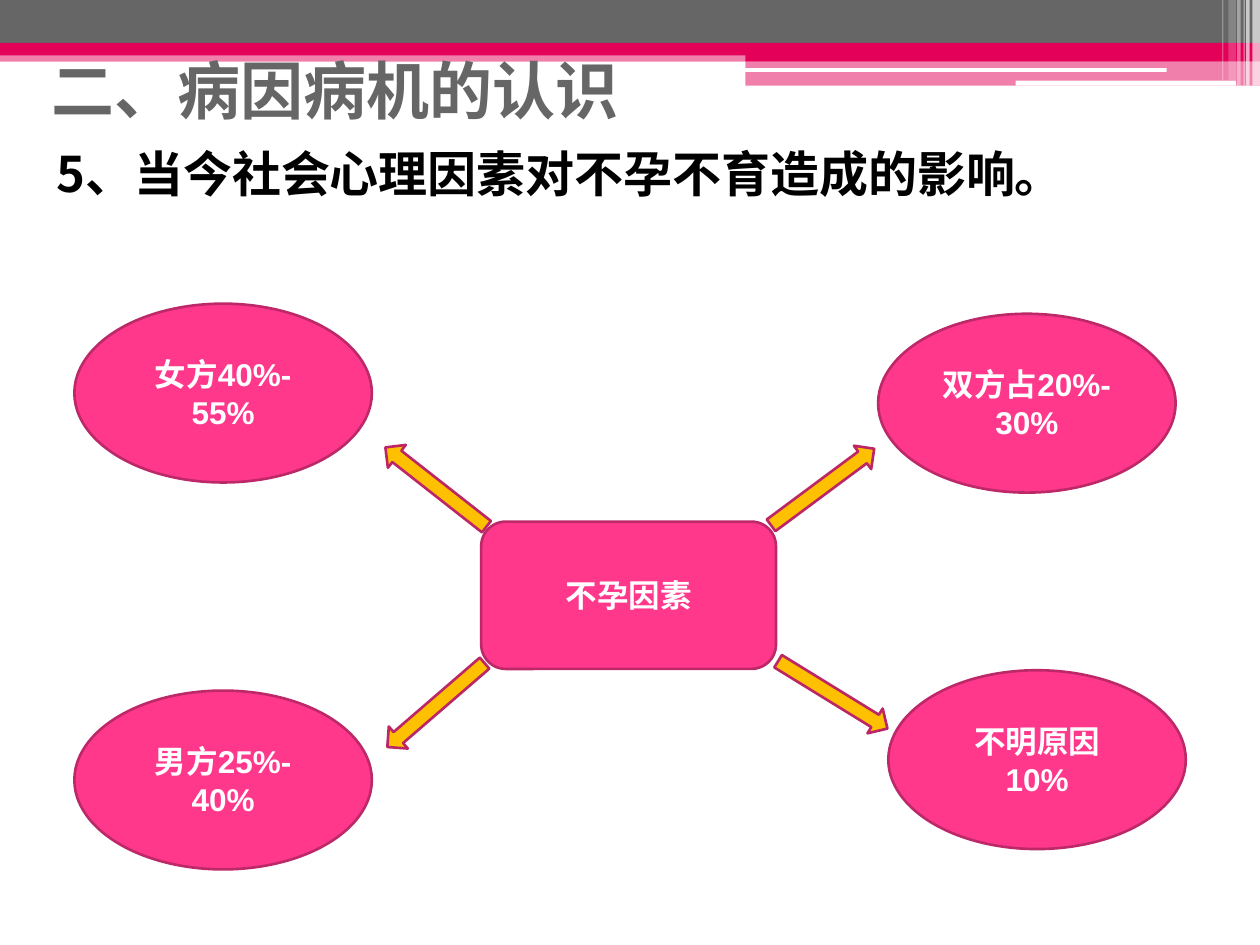
from dataclasses import dataclass

from lxml import etree
from pptx import Presentation
from pptx.dml.color import RGBColor
from pptx.enum.shapes import MSO_SHAPE
from pptx.enum.text import MSO_ANCHOR, MSO_AUTO_SIZE, PP_ALIGN
from pptx.oxml.ns import qn
from pptx.util import Pt

RECT = MSO_SHAPE.RECTANGLE
ROUNDED = MSO_SHAPE.ROUNDED_RECTANGLE
OVAL = MSO_SHAPE.OVAL
ARROW = MSO_SHAPE.RIGHT_ARROW
MIDDLE, TOP = MSO_ANCHOR.MIDDLE, MSO_ANCHOR.TOP
LEFT, CENTER = PP_ALIGN.LEFT, PP_ALIGN.CENTER
FIXED_SIZE = MSO_AUTO_SIZE.NONE
TITLE_ONLY = 5


@dataclass(frozen=True)
class Theme:
    """Colours, fonts and type sizes of the slide."""

    gray: str = "666666"
    crimson: str = "E40059"
    white: str = "FFFFFF"
    black: str = "000000"
    pink: str = "FF388C"
    pink_edge: str = "BD2968"
    gold: str = "FFC000"
    gold_edge: str = "BC2665"
    heading_font: str = "Roboto"
    body_font: str = "Cambria"
    factor_font: str = "Arial"
    chinese_font: str = "Noto Sans CJK SC"
    title_size: int = 36
    body_size: int = 28
    factor_size: int = 18


THEME = Theme()

HEADER_BARS = [
    (RECT, (0, 28.8, 720, 6.5), THEME.crimson, 50),
    (RECT, (0, 0, 720, 24.5), THEME.gray, 100),
    (RECT, (0, 24.5, 720, 7.2), THEME.crimson, 100),
    (RECT, (426, 28, 294, 7), THEME.crimson, 100),
    (RECT, (426, 34.6, 294, 14.4), THEME.crimson, 50),
    (ROUNDED, (425.5, 38.9, 241.2, 2.2), THEME.white, 100),
    (ROUNDED, (580.3, 46.1, 126, 2.9), THEME.white, 100),
]

EDGE_STRIPES = [
    (715.7, 4.3, 49, 65),
    (712.1, 2, 49, 65),
    (710.6, 0.7, 49, 60),
    (707, 2, 49, 40),
    (702, 4.3, 46, 20),
    (698.4, 0.7, 46, 30),
]

FACTORS = [
    ("女方40%-55%", (42.5, 173.5), (212.4, 270), 218.1),
    ("不明原因10%", (507.6, 383), (439.2, 388.8), 31.6),
    ("男方25%-40%", (42.5, 394.6), (212.4, 394.6), 139.2),
    ("双方占20%-30%", (501.8, 179.3), (433.4, 270), 323.4),
]


def add_block(slide, kind, box, fill, alpha=100, edge=None):
    """Add a flat preset shape with optional transparency and outline."""
    block = slide.shapes.add_shape(kind, *map(Pt, box))
    block.shadow.inherit = False
    block.fill.solid()
    block.fill.fore_color.rgb = RGBColor.from_string(fill)
    if alpha < 100:
        color = block.element.spPr.find(".//" + qn("a:srgbClr"))
        etree.SubElement(color, qn("a:alpha"), val=str(alpha * 1000))
    if edge:
        block.line.color.rgb = RGBColor.from_string(edge)
        block.line.width = Pt(1.5)
    else:
        block.line.fill.background()
    return block


def write_text(holder, *pieces, size, color, align=LEFT, anchor=MIDDLE):
    """Write bold (text, font) pieces as one wrapped paragraph."""
    frame = holder.text_frame
    frame.word_wrap = True
    frame.auto_size = FIXED_SIZE
    frame.vertical_anchor = anchor
    paragraph = frame.paragraphs[0]
    paragraph.alignment = align
    for text, font in pieces:
        run = paragraph.add_run()
        run.text = text
        run.font.name = font
        run.font.size = Pt(size)
        run.font.bold = True
        run.font.color.rgb = RGBColor.from_string(color)
        east_asian = etree.SubElement(run.font._element, qn("a:ea"))
        east_asian.set("typeface", THEME.chinese_font)
    return paragraph


def add_header(slide):
    """Draw the header bars and the pale stripes at the right edge."""
    for kind, box, fill, alpha in HEADER_BARS:
        add_block(slide, kind, box, fill, alpha)
    for left, width, height, alpha in EDGE_STRIPES:
        add_block(slide, RECT, (left, 0, width, height), THEME.white, alpha)


def add_title(slide, text):
    """Place the title over the header, raised within its box."""
    title = slide.shapes.title
    title.left, title.top, title.width, title.height = map(
        Pt, (22.3, 43.2, 444.2, 56.2)
    )
    write_text(title, (text, THEME.heading_font),
               size=THEME.title_size, color=THEME.gray)
    title.text_frame.margin_top = 0
    title.text_frame.margin_bottom = Pt(40)
    title.element.getparent().append(title.element)


def add_statement(slide, number, text):
    """Add the numbered statement with a hanging indent."""
    statement = slide.shapes.add_textbox(*map(Pt, (16.6, 78.5, 686.2, 440.6)))
    paragraph = write_text(
        statement, (number, THEME.chinese_font), (text, THEME.body_font),
        size=THEME.body_size, color=THEME.black, anchor=TOP,
    )
    paragraph.space_before = Pt(3)
    properties = paragraph._p.get_or_add_pPr()
    properties.set("marL", str(Pt(28.8)))
    properties.set("indent", str(Pt(-20.2)))


def add_node(slide, kind, box, text, font):
    """Add a pink node with a centred white label."""
    node = add_block(slide, kind, box, THEME.pink, edge=THEME.pink_edge)
    write_text(node, (text, font), size=THEME.factor_size,
               color=THEME.white, align=CENTER)


def add_factor(slide, text, place, arrow_place, angle):
    """Add one factor and the arrow that leads to it."""
    add_node(slide, OVAL, (*place, 170, 102.2), text, THEME.factor_font)
    arrow = add_block(slide, ARROW, (*arrow_place, 73.4, 16.6),
                      THEME.gold, edge=THEME.gold_edge)
    arrow.rotation = angle


def main():
    """Build and save the slide."""
    deck = Presentation()
    deck.slide_width, deck.slide_height = Pt(720), Pt(540)
    slide = deck.slides.add_slide(deck.slide_layouts[TITLE_ONLY])
    add_header(slide)
    add_title(slide, "二、病因病机的认识")
    add_statement(slide, "5、", "当今社会心理因素对不孕不育造成的影响。")
    add_node(slide, ROUNDED, (275, 298.1, 168.5, 84.2),
             "不孕因素", THEME.body_font)
    for factor in FACTORS:
        add_factor(slide, *factor)
    deck.save("out.pptx")


if __name__ == "__main__":
    main()
